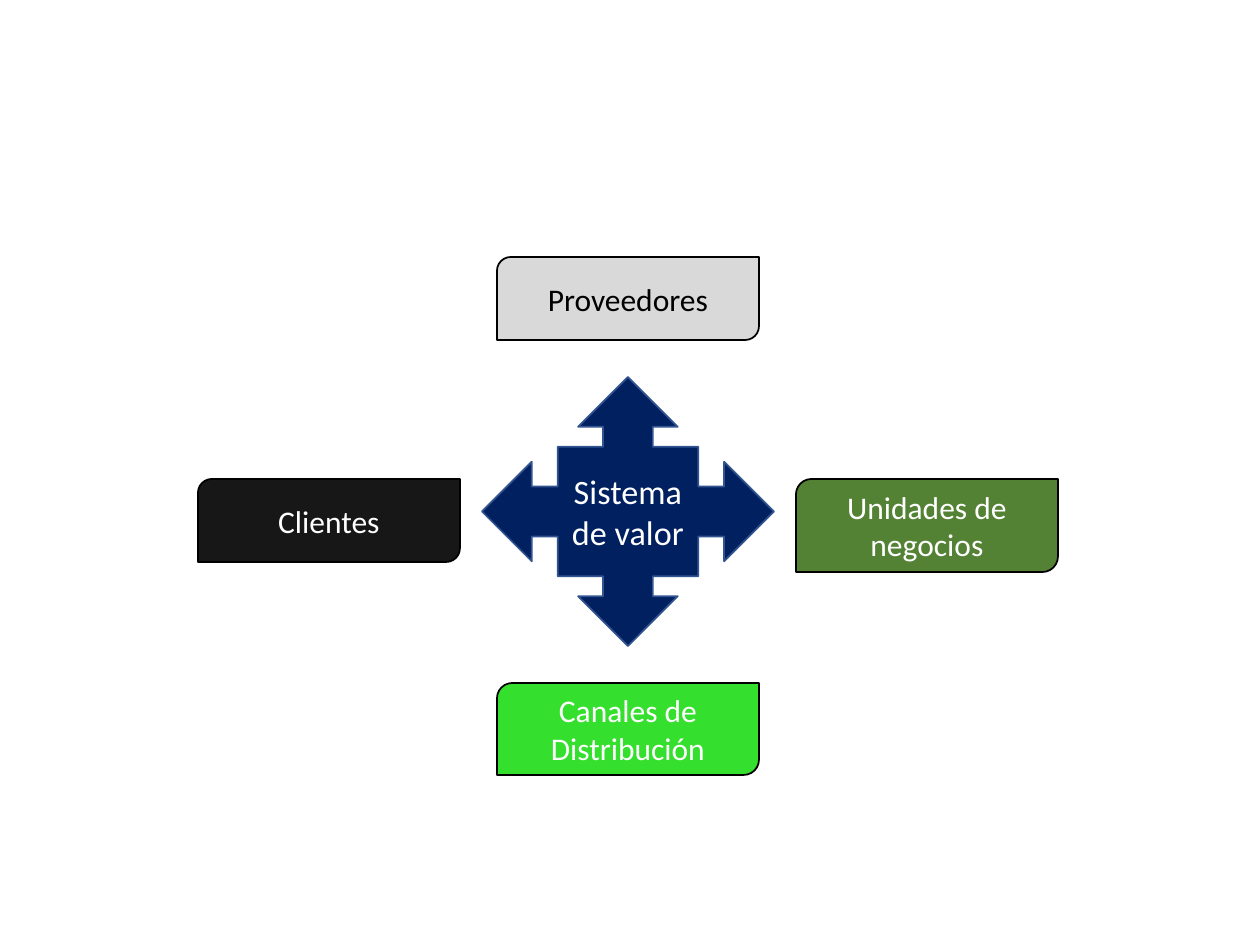
from pptx import Presentation
from pptx import util as u
from pptx.dml import color
from pptx.enum import shapes, text

PX = 914400 / 126
KIND = shapes.MSO_SHAPE


def px(n):
    """Turn pixels into EMU."""
    return u.Emu(round(n * PX))


def tint(code):
    """Turn a hex string into a colour."""
    return color.RGBColor.from_string(code)


def block(slide, kind, box, label, fill, line, ink, size):
    """Place one filled shape with a centred label."""
    item = slide.shapes.add_shape(kind, *map(px, box))
    item.shadow.inherit = False
    item.fill.solid()
    item.fill.fore_color.rgb = tint(fill)
    item.line.color.rgb = tint(line)
    item.line.width = u.Pt(1)
    frame = item.text_frame
    frame.word_wrap = True
    frame.vertical_anchor = text.MSO_ANCHOR.MIDDLE
    frame.text = label
    para = frame.paragraphs[0]
    para.alignment = text.PP_ALIGN.CENTER
    font = para.runs[0].font
    font.name = "Calibri"
    font.size = u.Pt(size)
    font.color.rgb = tint(ink)


def system(slide, box):
    """Draw the value system: a hub with four parties around it."""
    left, top, width, height = box
    hub_w, hub_h, card_w = 292, 269, 262
    mid = left + (width - card_w) // 2
    row = top + 222
    block(slide, KIND.QUAD_ARROW_CALLOUT,
          (left + (width - hub_w) // 2, top + 120, hub_w, hub_h),
          "Sistema de valor", "002060", "325491", "FFFFFF", 19.5)
    cards = [
        ("Proveedores", mid, top, 83, "D9D9D9", "000000"),
        ("Canales de Distribución", mid, top + height - 92, 92, "35DF2D", "FFFFFF"),
        ("Unidades de negocios", left + width - card_w, row, 93, "548235", "FFFFFF"),
        ("Clientes", left, row, 83, "181717", "FFFFFF"),
    ]
    for label, x, y, tall, fill, ink in cards:
        block(slide, KIND.ROUND_2_DIAG_RECTANGLE, (x, y, card_w, tall),
              label, fill, "000000", ink, 18)


def main():
    """Build the slide and save it."""
    deck = Presentation()
    deck.slide_width, deck.slide_height = px(1260), px(945)
    slide = deck.slides.add_slide(deck.slide_layouts[6])
    system(slide, (198, 257, 860, 518))
    deck.save("out.pptx")


if __name__ == "__main__":
    main()
